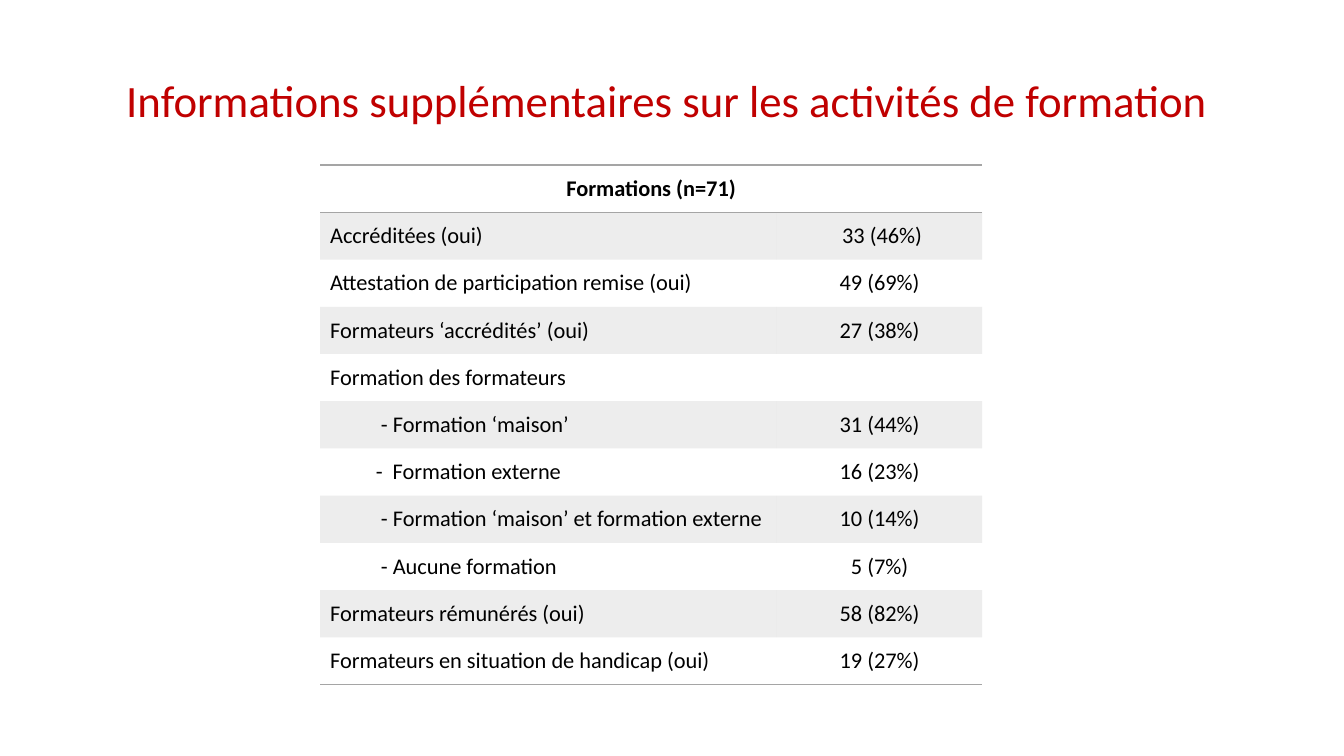
from lxml.etree import SubElement
from pptx import Presentation
from pptx.dml.color import RGBColor
from pptx.enum.text import MSO_ANCHOR, PP_ALIGN
from pptx.oxml import parse_xml
from pptx.oxml.ns import nsdecls, qn
from pptx.util import Cm, Pt

TITLE = "Informations supplémentaires sur les activités de formation "
HEADING = "Formations (n=71)"
ACTIVITIES = [
    ("Accréditées (oui)", " 33 (46%)", 0),
    ("Attestation de participation remise (oui)", "49 (69%)", 0),
    ("Formateurs ‘accrédités’ (oui)", "27 (38%)", 0),
    ("Formation des formateurs", "", 0),
    ("- Formation ‘maison’", "31 (44%)", 1.28),
    ("-  Formation externe", "16 (23%)", 1.15),
    ("- Formation ‘maison’ et formation externe", "10 (14%)", 1.28),
    ("- Aucune formation", "5 (7%)", 1.28),
    ("Formateurs rémunérés (oui)", "58 (82%)", 0),
    ("Formateurs en situation de handicap (oui)", "19 (27%)", 0),
]
COLORS = {"title": "C00000", "text": "000000", "grey": "A5A5A5"}
FONT = "Calibri"
BAND_OPACITY = 20
PLAIN_STYLE = "{2D5ABB26-0587-4C30-8999-92F81FD0307C}"
COLUMN_WIDTHS = (Cm(11.51), Cm(5.17))
ROW_HEIGHT = Cm(1.19)
PADDING = Cm(0.25)


def write(paragraph, text, size, color, align, bold=False):
    paragraph.text = text
    paragraph.alignment = align
    font = paragraph.font
    font.name, font.size, font.bold = FONT, Pt(size), bold
    font.color.rgb = RGBColor.from_string(COLORS[color])


def fill_cell(cell, text, align, indent=0, bold=False):
    cell.margin_left = cell.margin_right = PADDING
    cell.margin_top = cell.margin_bottom = PADDING
    cell.vertical_anchor = MSO_ANCHOR.MIDDLE
    paragraph = cell.text_frame.paragraphs[0]
    write(paragraph, text, 16, "text", align, bold)
    if indent:
        paragraph._p.get_or_add_pPr().set("marL", str(Cm(indent)))


def rule_row(row, sides):
    for cell in row.cells:
        for position, side in enumerate(sides):
            cell._tc.get_or_add_tcPr().insert(position, parse_xml(
                f'<a:ln{side} {nsdecls("a")} w="{Pt(1)}"><a:solidFill>'
                f'<a:srgbClr val="{COLORS["grey"]}"/></a:solidFill></a:ln{side}>'))


def shade_row(row):
    for cell in row.cells:
        cell.fill.solid()
        cell.fill.fore_color.rgb = RGBColor.from_string(COLORS["grey"])
        tint = cell._tc.tcPr.find(".//" + qn("a:srgbClr"))
        SubElement(tint, qn("a:alpha")).set("val", str(BAND_OPACITY * 1000))


def add_title(slide):
    frame = slide.shapes.add_textbox(Cm(1.47), Cm(0.74), Cm(30.94), Cm(2.59)).text_frame
    frame.word_wrap = True
    frame.vertical_anchor = MSO_ANCHOR.BOTTOM
    write(frame.paragraphs[0], TITLE, 32, "title", PP_ALIGN.CENTER)
    frame.paragraphs[0].line_spacing = 0.9


def add_activities(slide):
    row_count = len(ACTIVITIES) + 1
    table = slide.shapes.add_table(row_count, 2, Cm(8.07), Cm(4.16),
                                   sum(COLUMN_WIDTHS), ROW_HEIGHT * row_count).table
    table._tbl.tblPr.find(qn("a:tableStyleId")).text = PLAIN_STYLE
    for column, width in zip(table.columns, COLUMN_WIDTHS):
        column.width = width
    table.cell(0, 0).merge(table.cell(0, 1))
    fill_cell(table.cell(0, 0), HEADING, PP_ALIGN.CENTER, bold=True)
    for number, (label, value, indent) in enumerate(ACTIVITIES, 1):
        fill_cell(table.cell(number, 0), label, PP_ALIGN.LEFT, indent)
        fill_cell(table.cell(number, 1), value, PP_ALIGN.CENTER)
        if number % 2:
            shade_row(table.rows[number])
    rule_row(table.rows[0], "TB")
    rule_row(table.rows[row_count - 1], "B")


def main():
    """Build the slide on training activities."""
    deck = Presentation()
    deck.slide_width, deck.slide_height = Cm(33.87), Cm(19.05)
    slide = deck.slides.add_slide(deck.slide_layouts[6])
    add_title(slide)
    add_activities(slide)
    deck.save("out.pptx")


if __name__ == "__main__":
    main()
